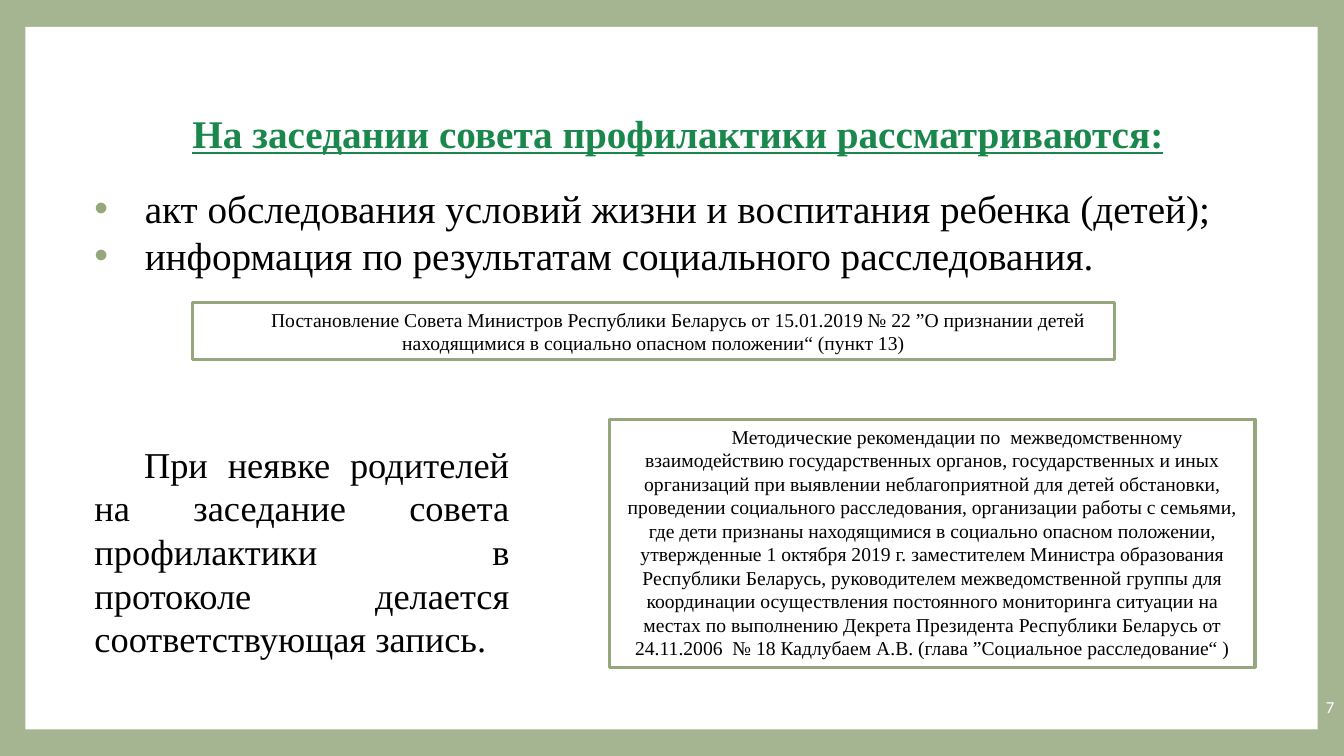
from lxml import etree
from pptx import Presentation
from pptx.dml.color import RGBColor
from pptx.enum.shapes import MSO_SHAPE
from pptx.enum.text import MSO_ANCHOR, MSO_AUTO_SIZE, PP_ALIGN
from pptx.oxml.ns import qn
from pptx.util import Cm, Pt

RECTANGLE = MSO_SHAPE.RECTANGLE
TOP, MIDDLE = MSO_ANCHOR.TOP, MSO_ANCHOR.MIDDLE
NO_AUTOFIT = MSO_AUTO_SIZE.NONE
CENTER, JUSTIFY, RIGHT = PP_ALIGN.CENTER, PP_ALIGN.JUSTIFY, PP_ALIGN.RIGHT

SAGE = RGBColor(0xA5, 0xB5, 0x92)
DARK_SAGE = RGBColor(0x94, 0xA7, 0x7D)
GREEN = RGBColor(0x1A, 0x88, 0x4C)
BLACK = RGBColor(0, 0, 0)
WHITE = RGBColor(0xFF, 0xFF, 0xFF)

SERIF = "Times New Roman"
SANS = "Calibri"
FIRST_LINE = Cm(1.25)
HANGING = Cm(1.27)
LINE_SPACING = 1.0

HEADING = "На заседании совета профилактики рассматриваются:"
AGENDA = (
    "акт обследования условий жизни и воспитания ребенка (детей);",
    "информация по результатам социального расследования.",
)
RESOLUTION = (
    "Постановление Совета Министров Республики Беларусь от 15.01.2019 № 22 "
    "”О признании детей находящимися в социально опасном положении“ (пункт 13)"
)
GUIDELINES = (
    "Методические рекомендации по  межведомственному взаимодействию "
    "государственных органов, государственных и иных организаций при выявлении "
    "неблагоприятной для детей обстановки, проведении социального расследования, "
    "организации работы с семьями, где дети признаны находящимися в социально "
    "опасном положении, утвержденные 1 октября 2019 г. заместителем Министра "
    "образования Республики Беларусь, руководителем межведомственной группы для "
    "координации осуществления постоянного мониторинга ситуации на местах по "
    "выполнению Декрета Президента Республики Беларусь от 24.11.2006  № 18 "
    "Кадлубаем А.В. (глава ”Социальное расследование“ )"
)
ABSENCE = (
    "При неявке родителей на заседание совета профилактики в протоколе "
    "делается соответствующая запись."
)


def prepare_frame(frame, anchor=TOP):
    """Make a text frame wrap at a fixed size with the common margins."""
    frame.word_wrap = True
    frame.auto_size = NO_AUTOFIT
    frame.vertical_anchor = anchor
    frame.margin_left = frame.margin_right = Cm(0.25)
    frame.margin_top = frame.margin_bottom = Cm(0.13)


def write_paragraph(paragraph, text, size, align, color=BLACK, font=SERIF,
                    left=0, indent=FIRST_LINE):
    """Fill a paragraph with one formatted run and return the run."""
    paragraph.alignment = align
    paragraph.line_spacing = LINE_SPACING
    properties = paragraph._p.get_or_add_pPr()
    properties.set("marL", str(int(left)))
    properties.set("indent", str(int(indent)))
    run = paragraph.add_run()
    run.text = text
    run.font.name = font
    run.font.size = Pt(size)
    run.font.color.rgb = color
    return run


def add_bullet(paragraph, color):
    """Give a paragraph a coloured round bullet."""
    properties = paragraph._p.get_or_add_pPr()
    bullet_color = etree.SubElement(properties, qn("a:buClr"))
    etree.SubElement(bullet_color, qn("a:srgbClr")).set("val", str(color))
    etree.SubElement(properties, qn("a:buFont")).set("typeface", "Arial")
    etree.SubElement(properties, qn("a:buChar")).set("char", "•")


def add_page(slide, box):
    """Lay the white page over the sage background."""
    slide.background.fill.solid()
    slide.background.fill.fore_color.rgb = SAGE
    page = slide.shapes.add_shape(RECTANGLE, *box)
    page.shadow.inherit = False
    page.fill.solid()
    page.fill.fore_color.rgb = WHITE
    page.line.fill.background()
    tree = slide.shapes._spTree
    tree.remove(page._element)
    tree.insert(2, page._element)


def add_heading(slide, box):
    """Place and format the title placeholder."""
    heading = slide.shapes.title
    heading.left, heading.top, heading.width, heading.height = box
    prepare_frame(heading.text_frame)
    run = write_paragraph(heading.text_frame.paragraphs[0], HEADING, 28,
                          CENTER, GREEN)
    run.font.bold = True
    run.font.underline = True


def add_agenda(slide, box):
    """Add the bulleted list of items under review."""
    frame = slide.shapes.add_textbox(*box).text_frame
    prepare_frame(frame)
    for number, item in enumerate(AGENDA):
        paragraph = frame.add_paragraph() if number else frame.paragraphs[0]
        write_paragraph(paragraph, item, 28, JUSTIFY, left=HANGING,
                        indent=-HANGING)
        add_bullet(paragraph, DARK_SAGE)


def add_legal_reference(slide, box, text):
    """Add an outlined box that cites a legal document."""
    reference = slide.shapes.add_shape(RECTANGLE, *box)
    reference.shadow.inherit = False
    reference.fill.background()
    reference.line.color.rgb = DARK_SAGE
    reference.line.width = Pt(2.25)
    prepare_frame(reference.text_frame)
    write_paragraph(reference.text_frame.paragraphs[0], text, 14, CENTER)


def add_absence_note(slide, box):
    """Add the note about parents who do not attend."""
    frame = slide.shapes.add_textbox(*box).text_frame
    prepare_frame(frame)
    write_paragraph(frame.paragraphs[0], ABSENCE, 26, JUSTIFY)


def add_page_number(slide, box):
    """Add the page number on the right border."""
    frame = slide.shapes.add_textbox(*box).text_frame
    prepare_frame(frame, MIDDLE)
    write_paragraph(frame.paragraphs[0], "7", 12, RIGHT, WHITE, SANS, indent=0)


def main():
    """Build the slide and save it."""
    deck = Presentation()
    deck.slide_width, deck.slide_height = Cm(33.87), Cm(19.05)
    slide = deck.slides.add_slide(deck.slide_layouts[5])
    add_page(slide, (Cm(0.64), Cm(0.68), Cm(32.57), Cm(17.7)))
    add_heading(slide, (Cm(2.46), Cm(2.62), Cm(28), Cm(1.45)))
    add_agenda(slide, (Cm(2.13), Cm(4.52), Cm(29.51), Cm(2.64)))
    add_legal_reference(slide, (Cm(4.85), Cm(7.62), Cm(23.24), Cm(1.45)),
                        RESOLUTION)
    add_legal_reference(slide, (Cm(15.37), Cm(10.57), Cm(16.26), Cm(6.25)),
                        GUIDELINES)
    add_absence_note(slide, (Cm(2.13), Cm(11), Cm(10.97), Cm(5.82)))
    add_page_number(slide, (Cm(29.13), Cm(17.3), Cm(4.75), Cm(1.02)))
    deck.save("out.pptx")


if __name__ == "__main__":
    main()
